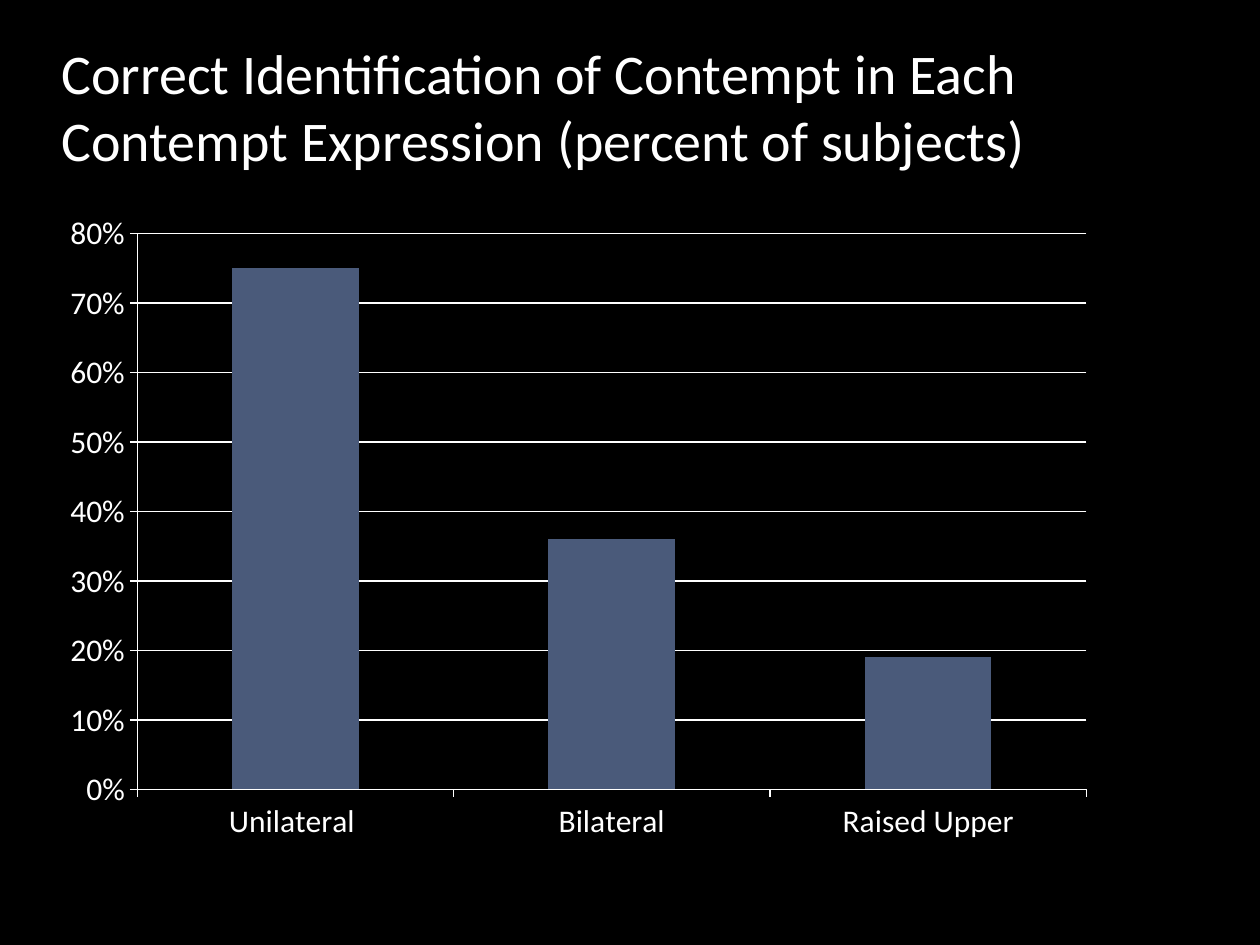
from dataclasses import dataclass

from pptx import Presentation
from pptx.chart.axis import _BaseAxis as Axis
from pptx.chart.data import CategoryChartData
from pptx.dml.color import RGBColor
from pptx.enum.chart import XL_CHART_TYPE as ChartType, XL_TICK_MARK as TickMark
from pptx.enum.text import MSO_ANCHOR as Anchor
from pptx.slide import Slide
from pptx.util import Inches, Pt


@dataclass(frozen=True)
class Theme:
    background: RGBColor = RGBColor(0x00, 0x00, 0x00)
    foreground: RGBColor = RGBColor(0xFF, 0xFF, 0xFF)
    bar: RGBColor = RGBColor(0x4A, 0x5A, 0x7A)
    font: str = "Calibri"
    title_size: Pt = Pt(32)
    chart_size: Pt = Pt(18)
    line_width: Pt = Pt(0.75)


@dataclass(frozen=True)
class Box:
    left: float
    top: float
    width: float
    height: float

    def lengths(self) -> tuple:
        return tuple(Inches(n) for n in (self.left, self.top, self.width, self.height))


@dataclass(frozen=True)
class Expression:
    name: str
    share: float


THEME = Theme()
TITLE_BOX = Box(0.39, 0.25, 8.4, 1.17)
CHART_BOX = Box(0.39, 1.6, 8.4, 5.17)
TITLE = "Correct Identification of Contempt in Each Contempt Expression (percent of subjects)"
EXPRESSIONS = (
    Expression("Unilateral ", 0.75),
    Expression("Bilateral", 0.36),
    Expression("Raised Upper", 0.19),
)


def apply_format(target: object, values: dict) -> None:
    for name, value in values.items():
        setattr(target, name, value)


def style_font(font: object, size: Pt) -> None:
    apply_format(font, {"name": THEME.font, "size": size, "bold": False})
    font.color.rgb = THEME.foreground


def style_line(line: object) -> None:
    line.color.rgb = THEME.foreground
    line.width = THEME.line_width


def add_title(slide: Slide) -> None:
    frame = slide.shapes.add_textbox(*TITLE_BOX.lengths()).text_frame
    apply_format(frame, {"word_wrap": True, "vertical_anchor": Anchor.BOTTOM})
    paragraph = frame.paragraphs[0]
    paragraph.space_before = Pt(4)
    run = paragraph.add_run()
    run.text = TITLE
    style_font(run.font, THEME.title_size)


def style_axis(axis: Axis, values: dict) -> None:
    apply_format(axis, {"major_tick_mark": TickMark.OUTSIDE,
                        "minor_tick_mark": TickMark.NONE, **values})
    style_line(axis.format.line)
    style_font(axis.tick_labels.font, THEME.chart_size)


def add_column_chart(slide: Slide) -> None:
    data = CategoryChartData(number_format="0%")
    data.categories = [expression.name for expression in EXPRESSIONS]
    data.add_series("Series 1", [expression.share for expression in EXPRESSIONS])
    chart = slide.shapes.add_chart(
        ChartType.COLUMN_CLUSTERED, *CHART_BOX.lengths(), data).chart
    apply_format(chart, {"has_legend": False, "has_title": False})
    style_font(chart.font, THEME.chart_size)

    style_axis(chart.category_axis, {"has_major_gridlines": False})
    style_axis(chart.value_axis, {
        "has_major_gridlines": True, "minimum_scale": 0,
        "maximum_scale": 0.8, "major_unit": 0.1})
    style_line(chart.value_axis.major_gridlines.format.line)
    apply_format(chart.value_axis.tick_labels,
                 {"number_format": "0%", "number_format_is_linked": False})

    plot = chart.plots[0]
    apply_format(plot, {"gap_width": 150, "vary_by_categories": False})
    fill = plot.series[0].format.fill
    fill.solid()
    fill.fore_color.rgb = THEME.bar


def main() -> None:
    presentation = Presentation()
    apply_format(presentation, {"slide_width": Inches(10), "slide_height": Inches(7.5)})
    slide = presentation.slides.add_slide(presentation.slide_layouts[6])
    background = slide.background.fill
    background.solid()
    background.fore_color.rgb = THEME.background
    add_column_chart(slide)
    add_title(slide)
    presentation.save("out.pptx")


if __name__ == "__main__":
    main()
